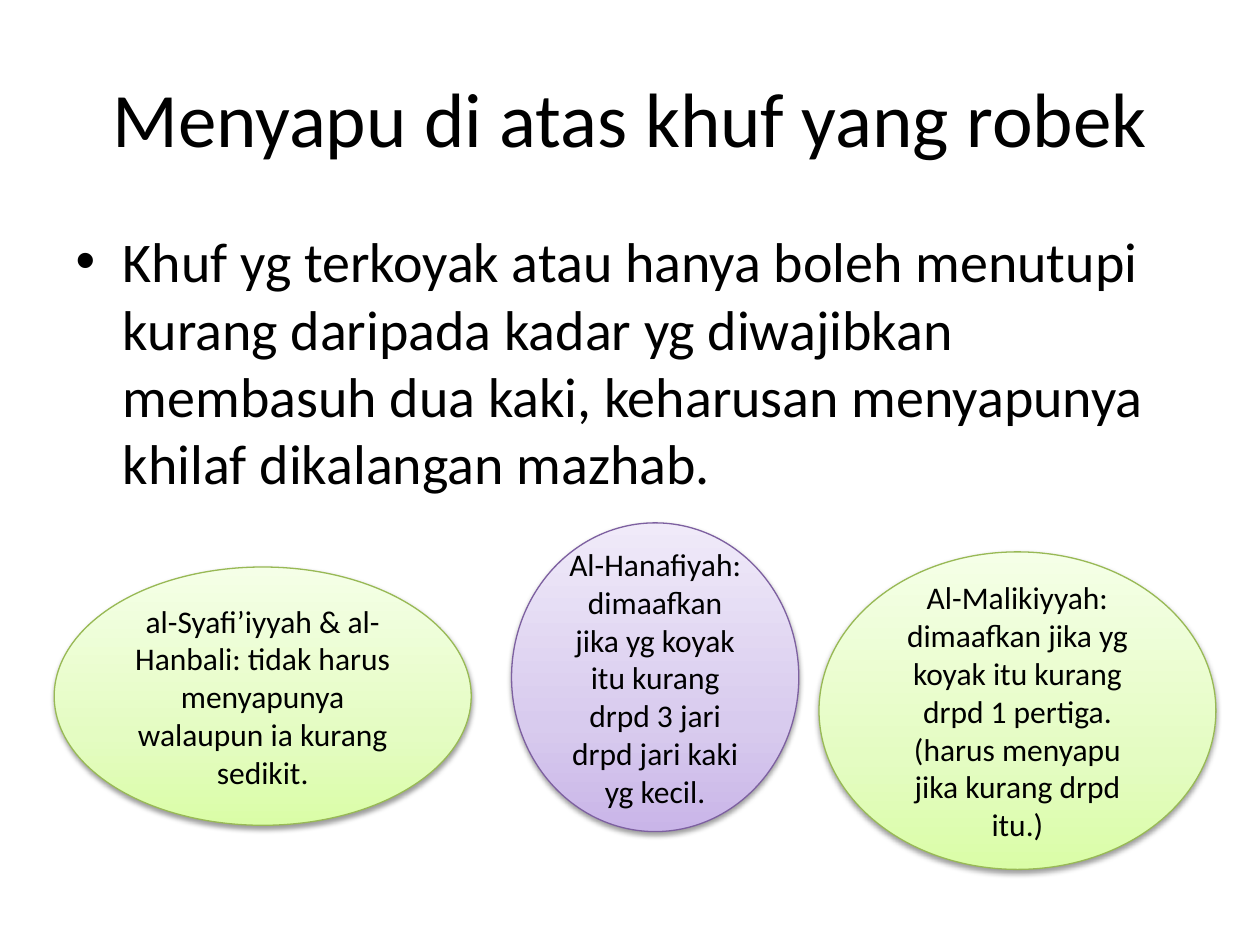
from lxml import etree
from pptx import Presentation, util as u
from pptx.dml.color import RGBColor
from pptx.enum import shapes, text
from pptx.oxml import ns

THEME = {
    "font": "Calibri", "text": "000000",
    "title": 44, "body": 32, "label": 18,
    "green": {"line": "98B955", "stops": [(0, "DAFDA7"), (35, "E4FCC2"), (100, "F5FFE7")]},
    "purple": {"line": "7D60A0", "stops": [(0, "C9B5E8"), (35, "D8CBEE"), (100, "F0EAF9")]},
}

TITLE = "Menyapu di atas khuf yang robek"
BODY = ("Khuf yg terkoyak atau hanya boleh menutupi kurang daripada kadar yg "
        "diwajibkan membasuh dua kaki, keharusan menyapunya khilaf dikalangan mazhab.")
MAZHAB = [
    ("al-Syafi’iyyah & al-Hanbali: tidak harus menyapunya walaupun ia kurang sedikit.",
     "green", (0.43, 4.5, 3.31, 2.05)),
    ("Al-Hanafiyah: dimaafkan jika yg koyak itu kurang drpd 3 jari drpd jari kaki yg kecil.",
     "purple", (4.06, 4.15, 2.28, 2.45)),
    ("Al-Malikiyyah: dimaafkan jika yg koyak itu kurang drpd 1 pertiga."
     "(harus menyapu jika kurang drpd itu.)",
     "green", (6.5, 4.38, 3.15, 2.52)),
]


def write(sp, content, size, **para):
    tf = sp.text_frame
    tf.word_wrap = True
    p = tf.paragraphs[0]
    r = p.add_run()
    r.text = content
    for key, value in para.items():
        setattr(p, key, value)
    for key, value in {"name": THEME["font"], "size": u.Pt(THEME[size])}.items():
        setattr(r.font, key, value)
    r.font.color.rgb = RGBColor.from_string(THEME["text"])
    return tf


def place(sp, box):
    for key, value in zip(("left", "top", "width", "height"), box):
        setattr(sp, key, u.Inches(value))


def gradient(stops):
    parts = "".join(f'<a:gs pos="{pos * 1000}"><a:srgbClr val="{color}"/></a:gs>'
                    for pos, color in stops)
    return etree.fromstring(
        f'<a:gradFill xmlns:a="{ns.nsuri("a")}" rotWithShape="1"><a:gsLst>{parts}</a:gsLst>'
        '<a:lin ang="16200000" scaled="1"/></a:gradFill>')


def shadow():
    return etree.fromstring(
        f'<a:effectLst xmlns:a="{ns.nsuri("a")}"><a:outerShdw blurRad="{int(u.Pt(3.1))}" '
        f'dist="{int(u.Pt(1.6))}" dir="5400000" rotWithShape="0"><a:srgbClr val="000000">'
        '<a:alpha val="38000"/></a:srgbClr></a:outerShdw></a:effectLst>')


def add_oval(s, content, style, box):
    sp = s.shapes.add_shape(shapes.MSO_SHAPE.OVAL, *map(u.Inches, box))
    colors = THEME[style]
    sp.line.color.rgb = RGBColor.from_string(colors["line"])
    sp.line.width = u.Pt(0.75)
    props = sp._element.spPr
    props.find(ns.qn("a:prstGeom")).addnext(gradient(colors["stops"]))
    props.append(shadow())
    tf = write(sp, content, "label", alignment=text.PP_ALIGN.CENTER)
    tf.vertical_anchor = text.MSO_ANCHOR.MIDDLE


def main():
    prs = Presentation()
    prs.slide_width, prs.slide_height = u.Inches(10), u.Inches(7.5)
    s = prs.slides.add_slide(prs.slide_layouts[1])
    title, body = s.placeholders
    place(title, (0.5, 0.3, 9, 1.25))
    place(body, (0.5, 1.75, 9, 4.95))
    tf = write(title, TITLE, "title", alignment=text.PP_ALIGN.CENTER)
    tf.vertical_anchor = text.MSO_ANCHOR.MIDDLE
    write(body, BODY, "body")
    for content, style, box in MAZHAB:
        add_oval(s, content, style, box)
    prs.save("out.pptx")


if __name__ == "__main__":
    main()
